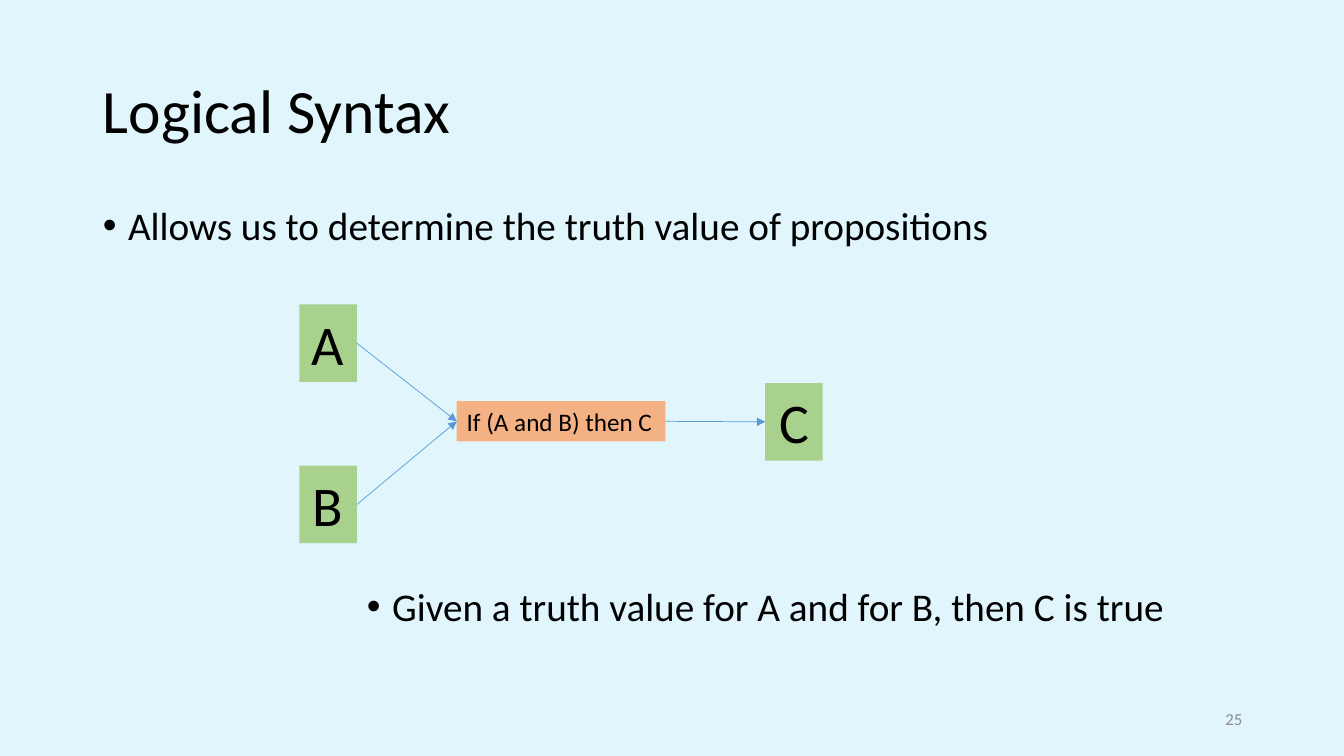
from pptx import Presentation
from pptx import util as u
from pptx.dml import color
from pptx.enum import shapes, text
from pptx.oxml import xmlchemy as xc

PX = 9144
FONT = "Calibri"
BLACK = "000000"
GREEN = "A9D18E"
ORANGE = "F4B183"
BLUE = "5B9BD5"
GREY = "8C8C8C"
LEFT_SIDE, RIGHT_SIDE = 1, 3


def px(*lengths):
    return [u.Emu(length * PX) for length in lengths]


def paint(target, hex_code):
    target.solid()
    target.fore_color.rgb = color.RGBColor.from_string(hex_code)


def place(shape, area):
    shape.left, shape.top, shape.width, shape.height = px(*area)


def write(box, words, size, align=text.PP_ALIGN.LEFT, anchor=text.MSO_ANCHOR.TOP,
          ink=BLACK, spacing=1.0, bullet=False, wrap=True):
    frame = box.text_frame
    frame.word_wrap = wrap
    frame.auto_size = text.MSO_AUTO_SIZE.NONE
    frame.vertical_anchor = anchor
    para = frame.paragraphs[0]
    para.alignment = align
    para.line_spacing = spacing
    para.space_before = u.Pt(0)
    if bullet:
        add_bullet(para)
    span = para.add_run()
    span.text = words
    span.font.name = FONT
    span.font.size = u.Pt(size)
    paint(span.font.fill, ink)


def add_bullet(para):
    props = para._p.get_or_add_pPr()
    indent = px(25)[0]
    props.set("marL", str(indent))
    props.set("indent", str(-indent))
    face = xc.OxmlElement("a:buFont")
    face.set("typeface", "Arial")
    mark = xc.OxmlElement("a:buChar")
    mark.set("char", "•")
    props.extend([face, mark])


def add_text(page, area, words, size, **style):
    box = page.shapes.add_textbox(*px(*area))
    write(box, words, size, **style)


def add_node(page, area, words, size, fill, **style):
    box = page.shapes.add_shape(shapes.MSO_SHAPE.RECTANGLE, *px(*area))
    box.shadow.inherit = False
    paint(box.fill, fill)
    box.line.fill.background()
    write(box, words, size, **style)
    return box


def add_arrow(page, source, target):
    arrow = page.shapes.add_connector(shapes.MSO_CONNECTOR.STRAIGHT, 0, 0, 0, 0)
    arrow.begin_connect(source, RIGHT_SIDE)
    arrow.end_connect(target, LEFT_SIDE)
    paint(arrow.line.fill, BLUE)
    arrow.line.width = u.Pt(0.5)
    head = xc.OxmlElement("a:tailEnd")
    head.set("type", "triangle")
    arrow.line._get_or_add_ln().append(head)
    arrow._element.spPr.append(xc.OxmlElement("a:effectLst"))


def main():
    deck = Presentation()
    deck.slide_width, deck.slide_height = px(1333, 750)
    page = deck.slides.add_slide(deck.slide_layouts[1])
    paint(page.background.fill, "E0F6FC")

    title, body = page.placeholders
    place(title, (92, 40, 1150, 145))
    write(title, "Logical Syntax", 44, anchor=text.MSO_ANCHOR.MIDDLE, spacing=0.9)
    place(body, (92, 200, 1150, 88))
    write(body, "Allows us to determine the truth value of propositions", 28,
          spacing=0.9, bullet=True)
    add_text(page, (942, 693, 300, 40), "25", 12, ink=GREY,
             align=text.PP_ALIGN.RIGHT, anchor=text.MSO_ANCHOR.MIDDLE)

    letters = {
        name: add_node(page, (left, top, 57, 77), name, 40, GREEN,
                       align=text.PP_ALIGN.CENTER)
        for name, left, top in (("A", 297, 302), ("B", 297, 462), ("C", 759, 380))
    }
    rule = add_node(page, (453, 398, 207, 40), "If (A and B) then C", 18, ORANGE,
                    wrap=False)
    for source, target in ((letters["A"], rule), (letters["B"], rule),
                           (rule, letters["C"])):
        add_arrow(page, source, target)

    add_text(page, (354, 578, 871, 88),
             "Given a truth value for A and for B, then C is true", 28,
             spacing=0.9, bullet=True)
    deck.save("out.pptx")


if __name__ == "__main__":
    main()
